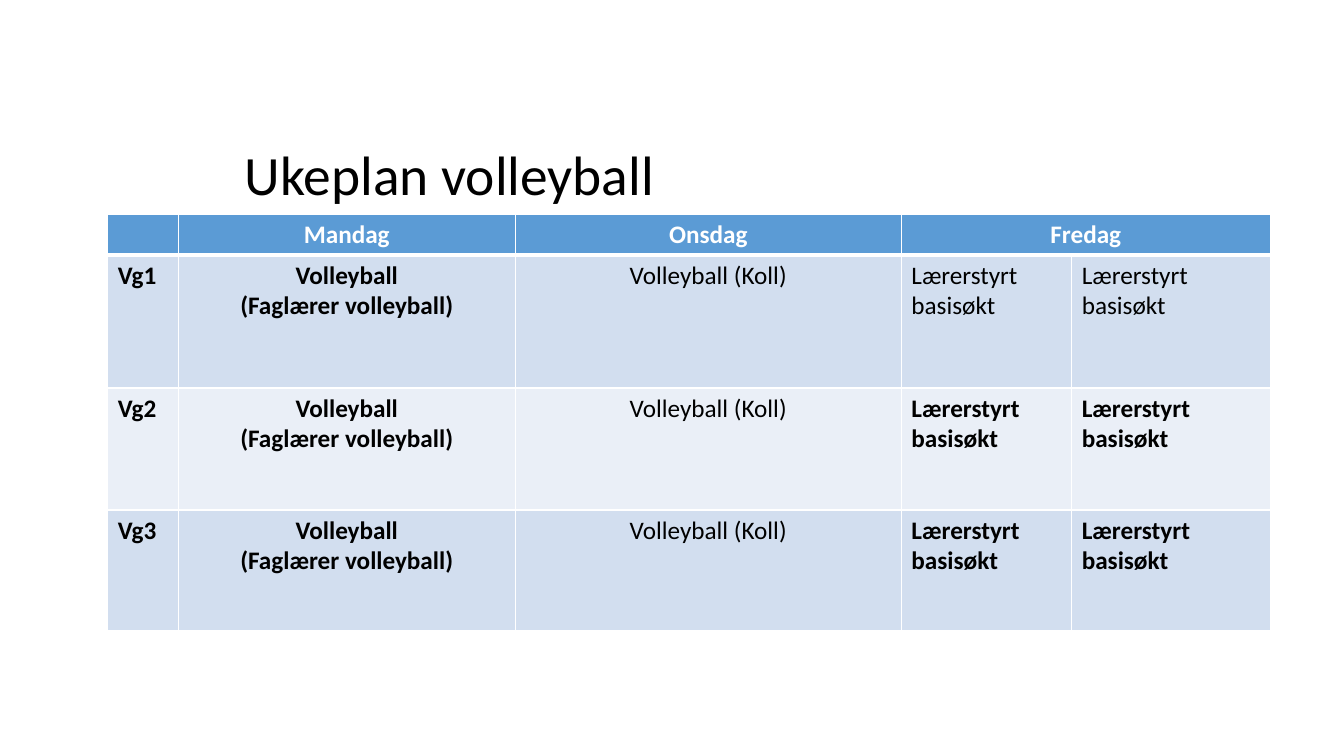
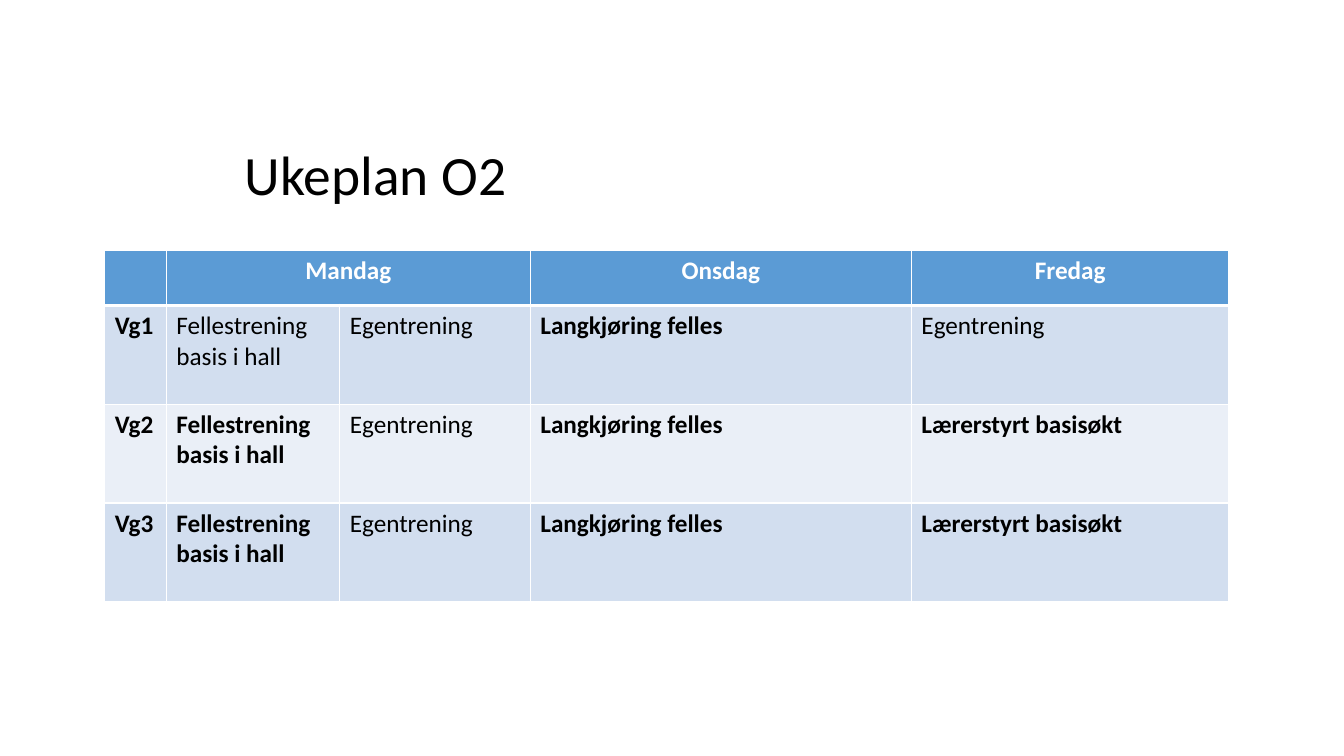
from typing import NamedTuple

from lxml import etree
from pptx import Presentation
from pptx.dml.color import RGBColor
from pptx.enum.text import MSO_ANCHOR, PP_ALIGN
from pptx.oxml.ns import qn
from pptx.util import Inches, Pt

LEFT, CENTER = PP_ALIGN.LEFT, PP_ALIGN.CENTER
MIDDLE = MSO_ANCHOR.MIDDLE

COLORS = {
    "text": "000000",
    "line": "FFFFFF",
    "header": "5B9BD5",
    "header_text": "FFFFFF",
    "odd_row": "D2DEEF",
    "even_row": "EAEFF7",
}
FORMATS = {
    "title": {"name": "Calibri", "size": Pt(39.6), "bold": False},
    "plain": {"name": "Calibri", "size": Pt(18), "bold": False},
    "strong": {"name": "Calibri", "size": Pt(18), "bold": True},
}


class Entry(NamedTuple):
    text: str
    style: str = "plain"
    align: int = LEFT


def strong(text, align=LEFT):
    return Entry(text, "strong", align)


class PlanDeck:
    """Holds the shared style and the current slide."""

    def __init__(self):
        self.prs = Presentation()
        self.prs.slide_width = Inches(13.33)
        self.prs.slide_height = Inches(7.5)
        self.slide = None

    def new_slide(self):
        self.slide = self.prs.slides.add_slide(self.prs.slide_layouts[6])

    def style_paragraph(self, paragraph, style, color):
        for attribute, value in FORMATS[style].items():
            setattr(paragraph.font, attribute, value)
        paragraph.font.color.rgb = RGBColor.from_string(COLORS[color])

    def title(self, text):
        box = self.slide.shapes.add_textbox(
            Inches(2.33), Inches(1.4), Inches(10.09), Inches(0.73))
        frame = box.text_frame
        frame.word_wrap = True
        frame.vertical_anchor = MIDDLE
        heading = frame.paragraphs[0]
        heading.text = text
        heading.line_spacing = 0.9
        self.style_paragraph(heading, "title", "text")

    def borders(self, cell, widths):
        properties = cell._tc.get_or_add_tcPr()
        for position, (side, width) in enumerate(widths.items()):
            line = etree.Element(qn(f"a:ln{side}"), w=str(Pt(width)))
            fill = etree.SubElement(line, qn("a:solidFill"))
            etree.SubElement(fill, qn("a:srgbClr"), val=COLORS["line"])
            properties.insert(position, line)

    def cell(self, cell, entry, row):
        band = "header" if row == 0 else "odd_row" if row % 2 else "even_row"
        cell.fill.solid()
        cell.fill.fore_color.rgb = RGBColor.from_string(COLORS[band])
        self.borders(cell, {"L": 1, "R": 1, "T": 3 if row == 1 else 1,
                            "B": 3 if row == 0 else 1})
        cell.text = entry.text
        for paragraph in cell.text_frame.paragraphs:
            paragraph.alignment = entry.align
            self.style_paragraph(paragraph, entry.style,
                                 "text" if row else "header_text")

    def week_table(self, left, top, widths, heights, days, plans):
        """days gives each header text with the number of columns it spans."""
        header, spans = [strong("")], []
        for day, span in days:
            spans.append((len(header), span))
            header += [strong(day, CENTER)] + [strong("")] * (span - 1)
        rows = [header] + [[strong(year), *plan] for year, plan in plans.items()]

        table = self.slide.shapes.add_table(
            len(rows), len(widths), Inches(left), Inches(top),
            Inches(sum(widths)), Inches(sum(heights))).table
        for column, width in zip(table.columns, widths):
            column.width = Inches(width)
        for row, height in zip(table.rows, heights):
            row.height = Inches(height)
        for r, entries in enumerate(rows):
            for c, entry in enumerate(entries):
                self.cell(table.cell(r, c), entry, r)
        for first, span in spans:
            if span > 1:
                table.cell(0, first).merge(table.cell(0, first + span - 1))


def main():
    deck = PlanDeck()
    basics = "Lærerstyrt basisøkt"

    # Volleyball week
    volleyball = [strong("Volleyball\n(Faglærer volleyball)", CENTER),
                  Entry("Volleyball (Koll)", align=CENTER)]
    deck.new_slide()
    deck.title("Ukeplan volleyball")
    deck.week_table(
        1.07, 2.13, [0.7, 3.34, 3.83, 1.69, 1.97], [0.4, 1.32, 1.21, 1.2],
        [("Mandag", 1), ("Onsdag", 1), ("Fredag", 2)],
        {"Vg1": volleyball + [Entry(basics)] * 2,
         "Vg2": volleyball + [strong(basics)] * 2,
         "Vg3": volleyball + [strong(basics)] * 2})

    # O2 week
    hall = "Fellestrening basis i hall"
    own = Entry("Egentrening")
    long_run = strong("Langkjøring felles")
    deck.new_slide()
    deck.title("Ukeplan O2")
    deck.week_table(
        1.04, 2.48, [0.61, 1.72, 1.89, 3.78, 3.15], [0.55] + [0.98] * 3,
        [("Mandag", 2), ("Onsdag", 1), ("Fredag", 1)],
        {"Vg1": [Entry(hall), own, long_run, own],
         "Vg2": [strong(hall), own, long_run, strong(basics)],
         "Vg3": [strong(hall), own, long_run, strong(basics)]})

    deck.prs.save("out.pptx")


if __name__ == "__main__":
    main()
